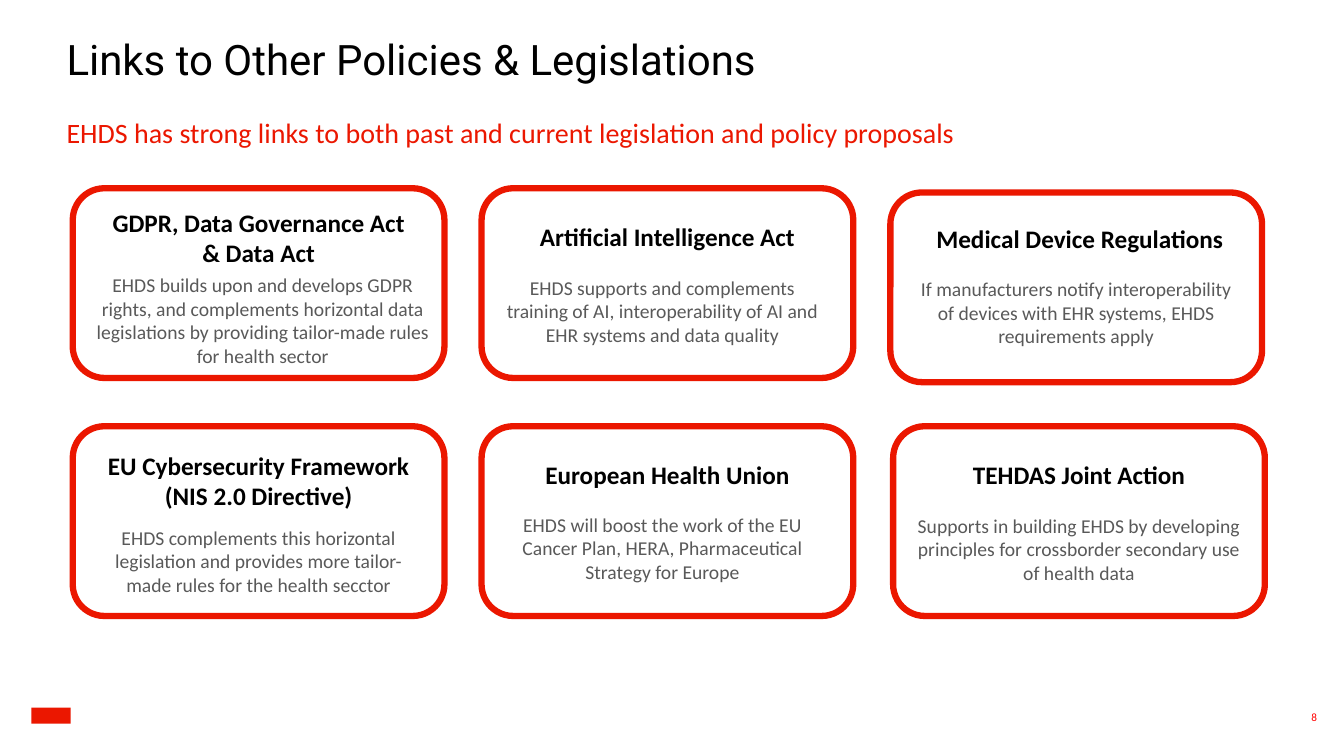
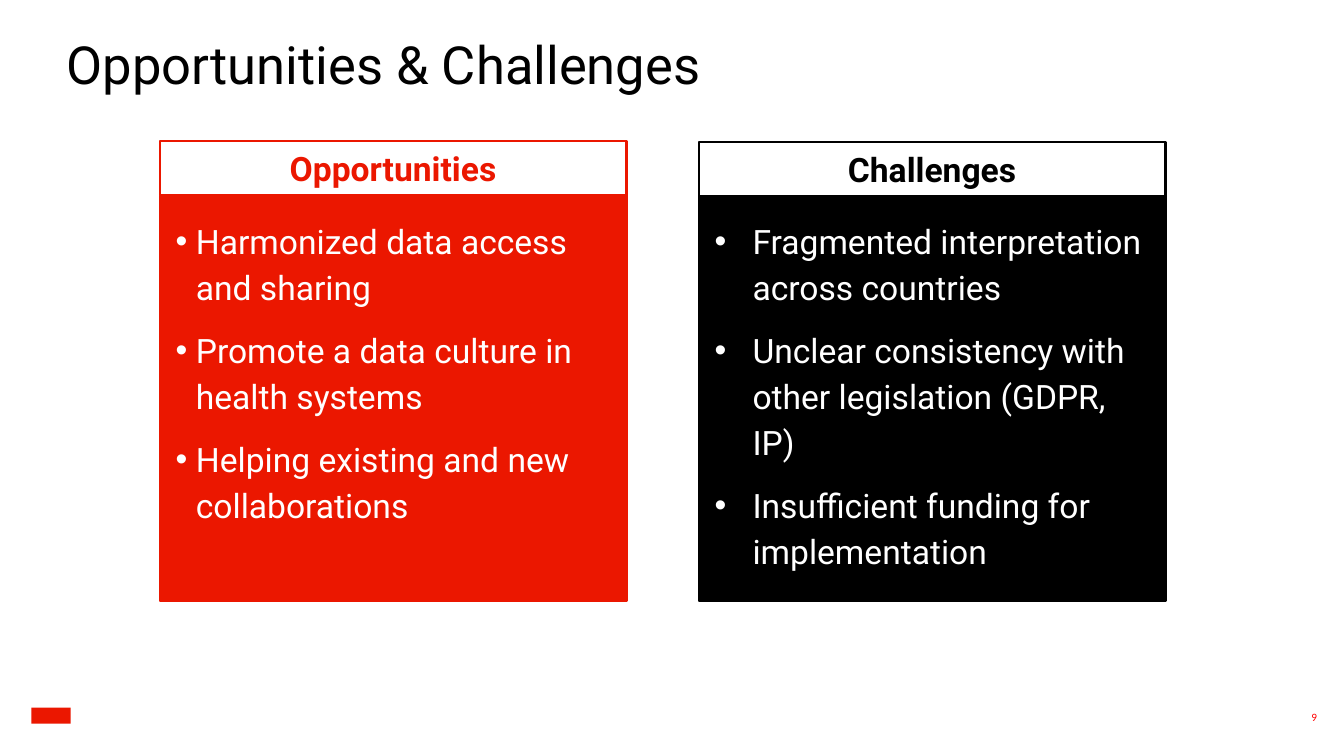
from dataclasses import dataclass

from lxml.etree import SubElement
from pptx import Presentation
from pptx.dml.color import RGBColor
from pptx.enum.shapes import MSO_SHAPE as Preset
from pptx.enum.text import MSO_ANCHOR as Anchor
from pptx.enum.text import MSO_AUTO_SIZE as AutoSize
from pptx.enum.text import PP_ALIGN as Align
from pptx.oxml.ns import qn
from pptx.util import Pt


@dataclass(frozen=True)
class Theme:
    red: RGBColor = RGBColor(0xEB, 0x17, 0x00)
    number_red: RGBColor = RGBColor(0xFF, 0x00, 0x00)
    black: RGBColor = RGBColor(0x00, 0x00, 0x00)
    white: RGBColor = RGBColor(0xFF, 0xFF, 0xFF)
    grey: RGBColor = RGBColor(0x59, 0x59, 0x59)
    display_font: str = "Roboto"
    text_font: str = "Calibri"
    title_size: float = 30
    large_title_size: float = 37.5
    subtitle_size: float = 20
    heading_size: float = 18
    body_size: float = 14
    panel_size: float = 24
    number_size: float = 8


THEME = Theme()


@dataclass(frozen=True)
class Box:
    left: float
    top: float
    width: float
    height: float

    def lengths(self):
        return Pt(self.left), Pt(self.top), Pt(self.width), Pt(self.height)


@dataclass(frozen=True)
class TextStyle:
    size: float
    color: RGBColor
    font: str = THEME.text_font
    bold: bool = False
    align: Align = Align.LEFT
    line_spacing: float = 1.0
    before: float = 0
    after: float = 0
    indent: float = 0  # hanging indent; above zero adds a bullet


@dataclass(frozen=True)
class Card:
    left: float
    top: float
    heading: tuple[str, ...]
    body: str
    heading_drop: float = 19.5
    heading_width: float = 212
    heading_height: float = 29
    heading_shift: float = 0
    body_drop: float = 58
    body_width: float = 232.5
    body_shift: float = 0


@dataclass(frozen=True)
class Panel:
    left: float
    header_top: float
    color: RGBColor
    indent: float
    header: str
    bullets: tuple[str, ...]


CARD_WIDTH, CARD_HEIGHT = 265.5, 135.5
FIRST_COLUMN, SECOND_COLUMN = 52, 344
FIRST_ROW, SECOND_ROW = 134.5, 304.5
PANEL_WIDTH, HEADER_HEIGHT, PANEL_TOP, PANEL_HEIGHT = 333.5, 38.5, 139.5, 290

CARDS = (
    Card(FIRST_COLUMN, FIRST_ROW, ("GDPR, Data Governance Act & Data Act",),
         "EHDS builds upon and develops GDPR rights, and complements horizontal "
         "data legislations by providing tailor-made rules for health sector",
         heading_drop=9.5, heading_width=216, heading_height=51,
         body_drop=57, body_width=245, body_shift=3),
    Card(SECOND_COLUMN, FIRST_ROW, ("Artificial Intelligence Act",),
         "EHDS supports and complements training of AI, interoperability of AI "
         "and EHR systems and data quality",
         heading_drop=20, body_drop=59, body_shift=-3.5),
    Card(636, 137.5, ("Medical Device Regulations",),
         "If manufacturers notify interoperability of devices with EHR systems, "
         "EHDS requirements apply",
         heading_drop=18.5, heading_width=243, heading_shift=2.5, body_drop=57),
    Card(FIRST_COLUMN, SECOND_ROW,
         ("EU Cybersecurity Framework", "(NIS 2.0 Directive)"),
         "EHDS complements this horizontal legislation and provides more "
         "tailor-made rules for the health secctor",
         heading_drop=13, heading_width=251, heading_height=51, body_drop=67.5),
    Card(SECOND_COLUMN, SECOND_ROW, ("European Health Union",),
         "EHDS will boost the work of the EU Cancer Plan, HERA, Pharmaceutical "
         "Strategy for Europe", body_shift=-3.5),
    Card(638, SECOND_ROW, ("TEHDAS Joint Action",),
         "Supports in building EHDS by developing principles for crossborder "
         "secondary use of health data", body_drop=59),
)

PANELS = (
    Panel(114, 101, THEME.red, 14.4, "Opportunities",
          ("Harmonized data access and sharing",
           "Promote a data culture in health systems",
           "Helping existing and new collaborations")),
    Panel(499, 101.5, THEME.black, 27, "Challenges",
          ("Fragmented interpretation across countries",
           "Unclear consistency with other legislation (GDPR, IP)",
           "Insufficient funding for implementation")),
)


def add_bullet(paragraph, indent: float) -> None:
    properties = paragraph._p.get_or_add_pPr()
    properties.set("marL", str(Pt(indent)))
    properties.set("indent", str(-Pt(indent)))
    SubElement(properties, qn("a:buFont")).set("typeface", "Arial")
    SubElement(properties, qn("a:buChar")).set("char", "•")


def write_text(shape, texts: tuple[str, ...], style: TextStyle,
               anchor: Anchor = Anchor.TOP,
               insets: tuple[float, float] = (0, 0)) -> None:
    """Fill a shape with one paragraph per text; insets are (sides, top and bottom)."""
    frame = shape.text_frame
    frame.word_wrap = True
    frame.auto_size = AutoSize.NONE
    frame.vertical_anchor = anchor
    frame.margin_left = frame.margin_right = Pt(insets[0])
    frame.margin_top = frame.margin_bottom = Pt(insets[1])
    for index, text in enumerate(texts):
        paragraph = frame.add_paragraph() if index else frame.paragraphs[0]
        paragraph.alignment = style.align
        paragraph.line_spacing = style.line_spacing
        paragraph.space_before = Pt(style.before)
        paragraph.space_after = Pt(style.after)
        if style.indent:
            add_bullet(paragraph, style.indent)
        run = paragraph.add_run()
        run.text = text
        run.font.name = style.font
        run.font.size = Pt(style.size)
        run.font.bold = style.bold
        run.font.color.rgb = style.color


def add_text(shapes, box: Box, texts: tuple[str, ...], style: TextStyle,
             anchor: Anchor = Anchor.TOP,
             insets: tuple[float, float] = (0, 0)) -> None:
    write_text(shapes.add_textbox(*box.lengths()), texts, style, anchor, insets)


def add_outline(shapes, preset: Preset, box: Box, line_color: RGBColor,
                line_width: float, fill: RGBColor | None = None):
    shape = shapes.add_shape(preset, *box.lengths())
    shape.shadow.inherit = False
    if fill is None:
        shape.fill.background()
    else:
        shape.fill.solid()
        shape.fill.fore_color.rgb = fill
    shape.line.color.rgb = line_color
    shape.line.width = Pt(line_width)
    return shape


def add_titled_slide(presentation, title: str, title_size: float, number: int):
    """Start a slide with the shared title, corner mark and page number."""
    slide = presentation.slides.add_slide(presentation.slide_layouts[5])
    placeholder = slide.shapes.title
    (placeholder.left, placeholder.top,
     placeholder.width, placeholder.height) = Box(47.5, 29.5, 799, 45).lengths()
    write_text(placeholder, (title,),
               TextStyle(title_size, THEME.black, THEME.display_font,
                         line_spacing=0.85, before=6, after=6))

    # Corner mark
    mark = add_outline(slide.shapes, Preset.RECTANGLE, Box(22.5, 505.5, 28, 11.5),
                       THEME.red, 0, THEME.red)
    mark.line.fill.background()

    # Page number
    add_text(slide.shapes, Box(912, 499, 36, 26), (str(number),),
             TextStyle(THEME.number_size, THEME.number_red, align=Align.RIGHT,
                       line_spacing=1.1, before=6, after=6),
             Anchor.MIDDLE, (7.2, 3.6))
    return slide


def add_card(slide, card: Card) -> None:
    shapes = slide.shapes.add_group_shape().shapes
    center = card.left + CARD_WIDTH / 2
    heading_box = Box(center + card.heading_shift - card.heading_width / 2,
                      card.top + card.heading_drop,
                      card.heading_width, card.heading_height)
    body_box = Box(center + card.body_shift - card.body_width / 2,
                   card.top + card.body_drop, card.body_width, 58)
    add_text(shapes, heading_box, card.heading,
             TextStyle(THEME.heading_size, THEME.black, bold=True,
                       align=Align.CENTER), Anchor.BOTTOM, (0, 3.6))
    add_outline(shapes, Preset.ROUNDED_RECTANGLE,
                Box(card.left, card.top, CARD_WIDTH, CARD_HEIGHT), THEME.red, 4.5)
    add_text(shapes, body_box, (card.body,),
             TextStyle(THEME.body_size, THEME.grey, align=Align.CENTER),
             insets=(0, 3.6))


def add_panel(slide, panel: Panel) -> None:
    body = add_outline(slide.shapes, Preset.RECTANGLE,
                       Box(panel.left, PANEL_TOP, PANEL_WIDTH, PANEL_HEIGHT),
                       panel.color, 1.5, panel.color)
    write_text(body, panel.bullets,
               TextStyle(THEME.panel_size, THEME.white, THEME.display_font,
                         line_spacing=1.14, after=12, indent=panel.indent),
               insets=(11.5, 14.4))
    header = add_outline(slide.shapes, Preset.RECTANGLE,
                         Box(panel.left, panel.header_top, PANEL_WIDTH, HEADER_HEIGHT),
                         panel.color, 1.5, THEME.white)
    write_text(header, (panel.header,),
               TextStyle(THEME.panel_size, panel.color, THEME.display_font,
                         bold=True, align=Align.CENTER),
               Anchor.MIDDLE, (7.2, 3.6))


def build_links_slide(presentation) -> None:
    slide = add_titled_slide(presentation, "Links to Other Policies & Legislations",
                             THEME.title_size, 8)
    add_text(slide.shapes, Box(47.5, 80, 865, 30),
             ("EHDS has strong links to both past and current legislation "
              "and policy proposals",),
             TextStyle(THEME.subtitle_size, THEME.red,
                       line_spacing=1.1, before=6, after=6))
    for card in CARDS:
        add_card(slide, card)


def build_balance_slide(presentation) -> None:
    slide = add_titled_slide(presentation, "Opportunities & Challenges",
                             THEME.large_title_size, 9)
    for panel in PANELS:
        add_panel(slide, panel)


def main() -> None:
    presentation = Presentation()
    presentation.slide_width, presentation.slide_height = Pt(960), Pt(540)
    build_links_slide(presentation)
    build_balance_slide(presentation)
    presentation.save("out.pptx")


if __name__ == "__main__":
    main()
